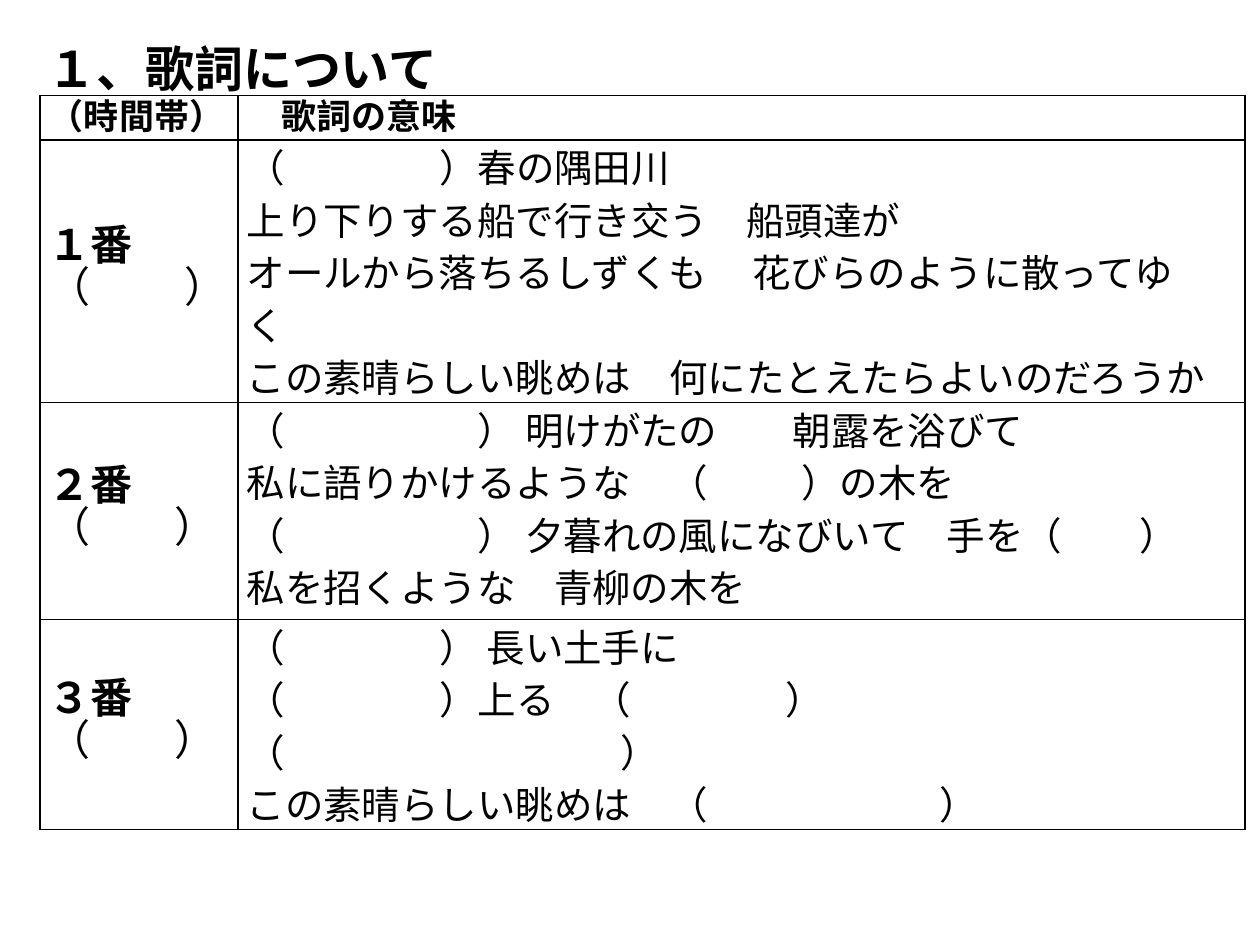
from lxml.etree import SubElement
from pptx import Presentation
from pptx.dml.color import RGBColor
from pptx.enum.text import MSO_ANCHOR, MSO_AUTO_SIZE
from pptx.oxml.ns import qn
from pptx.util import Pt

COLORS = {"ink": "000000", "paper": "FFFFFF"}
FONT = "Karla"
LABEL_SIZE, LYRIC_SIZE = 24, 22
COLUMN_WIDTHS = [113, 575.5]
ROW_HEIGHTS = [25.2, 116, 124, 99.4]
VERSES = [
    ("１番", 77.5, [
        ("（\t）春の隅田川", [110]),
        ("上り下りする船で行き交う　船頭達が", []),
        ("オールから落ちるしずくも\t花びらのように散ってゆく　", [289]),
        ("この素晴らしい眺めは　何にたとえたらよいのだろうか", []),
    ]),
    ("２番", 72, [
        ("（\t） 明けがたの\t朝露を浴びて", [132, 312]),
        ("私に語りかけるような　（\t）の木を\v"
         "（\t） 夕暮れの風になびいて　手を（\t）", [132, 317, 510]),
        ("私を招くような　青柳の木を", []),
    ]),
    ("３番", 72, [
        ("（\t） 長い土手に", [110]),
        ("（\t）上る　（\t）", [110, 308]),
        ("（\t）", [213.5]),
        ("この素晴らしい眺めは　（\t）", [396]),
    ]),
]


def write_text(paragraph, text, size, bold=False, spacing=None, tabs=()):
    """Fill a paragraph with formatted text and its tab stops."""
    paragraph.text = text
    if spacing:
        paragraph.line_spacing = Pt(spacing)
    if tabs:
        tab_list = SubElement(paragraph._p.get_or_add_pPr(), qn("a:tabLst"))
        for position in tabs:
            SubElement(tab_list, qn("a:tab"), pos=str(Pt(position)), algn="l")
    for run in paragraph.runs:
        run.font.size = Pt(size)
        run.font.bold = bold
        run.font.color.rgb = RGBColor.from_string(COLORS["ink"])
        run.font.name = FONT
        SubElement(run._r.get_or_add_rPr(), qn("a:ea"), typeface=FONT)


def fill_cell(cell, lines, anchor=MSO_ANCHOR.MIDDLE):
    """Write one paragraph per line into a bordered cell."""
    cell.margin_left = cell.margin_right = Pt(5)
    cell.margin_top = cell.margin_bottom = 0
    cell.vertical_anchor = anchor
    properties = cell._tc.get_or_add_tcPr()
    for side in ("lnL", "lnR", "lnT", "lnB"):
        border = SubElement(properties, qn(f"a:{side}"), w=str(Pt(1)))
        fill = SubElement(border, qn("a:solidFill"))
        SubElement(fill, qn("a:srgbClr"), val=COLORS["ink"])
    cell.fill.solid()
    cell.fill.fore_color.rgb = RGBColor.from_string(COLORS["paper"])
    frame = cell.text_frame
    for index, (text, formatting) in enumerate(lines):
        paragraph = frame.add_paragraph() if index else frame.paragraphs[0]
        write_text(paragraph, text, **formatting)


def add_title(slide, left, top, width, height):
    """Place the section heading."""
    box = slide.shapes.add_textbox(Pt(left), Pt(top), Pt(width), Pt(height))
    box.text_frame.word_wrap = True
    box.text_frame.auto_size = MSO_AUTO_SIZE.SHAPE_TO_FIT_TEXT
    write_text(box.text_frame.paragraphs[0], "１、歌詞について", size=28, bold=True)


def add_lyrics_table(slide, left, top):
    """Place the worksheet table of verses and their meanings."""
    table = slide.shapes.add_table(
        len(ROW_HEIGHTS), len(COLUMN_WIDTHS), Pt(left), Pt(top),
        Pt(sum(COLUMN_WIDTHS)), Pt(sum(ROW_HEIGHTS))).table
    table.first_row = table.horz_banding = False
    for column, width in zip(table.columns, COLUMN_WIDTHS):
        column.width = Pt(width)
    for row, height in zip(table.rows, ROW_HEIGHTS):
        row.height = Pt(height)
    for column, heading in enumerate(["（時間帯）", "　歌詞の意味"]):
        fill_cell(table.cell(0, column),
                  [(heading, dict(size=20, bold=True, spacing=24))])
    for row, (label, blank_end, lyrics) in enumerate(VERSES, start=1):
        fill_cell(table.cell(row, 0), [
            (label, dict(size=LABEL_SIZE, bold=True, spacing=24)),
            ("（\t）", dict(size=LABEL_SIZE, spacing=24, tabs=[blank_end])),
        ])
        fill_cell(table.cell(row, 1), [
            (text, dict(size=LYRIC_SIZE, spacing=30, tabs=tabs))
            for text, tabs in lyrics
        ], anchor=MSO_ANCHOR.TOP)


def main():
    """Build the lyrics worksheet slide."""
    presentation = Presentation()
    presentation.slide_width, presentation.slide_height = Pt(720), Pt(540)
    slide = presentation.slides.add_slide(presentation.slide_layouts[6])
    add_title(slide, 20, 18.7, 284, 41)
    add_lyrics_table(slide, 23, 54.7)
    presentation.save("out.pptx")


if __name__ == "__main__":
    main()
